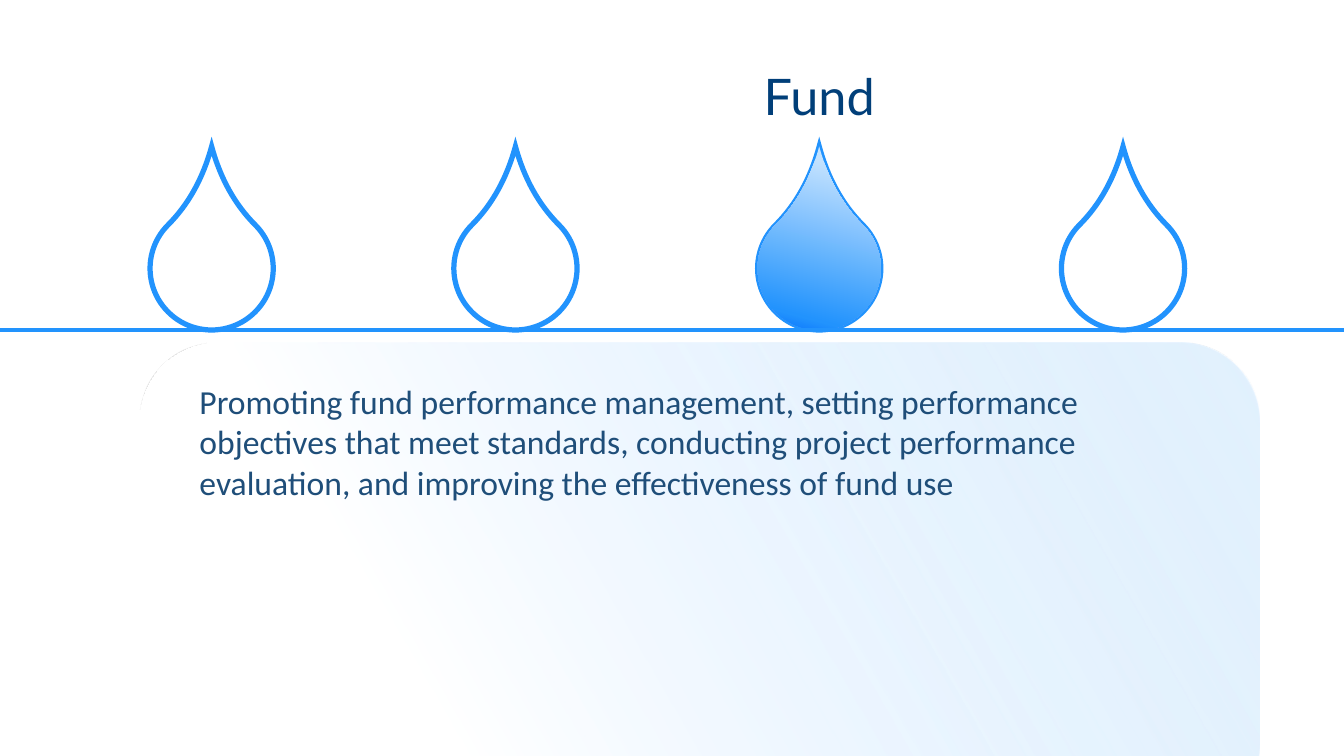
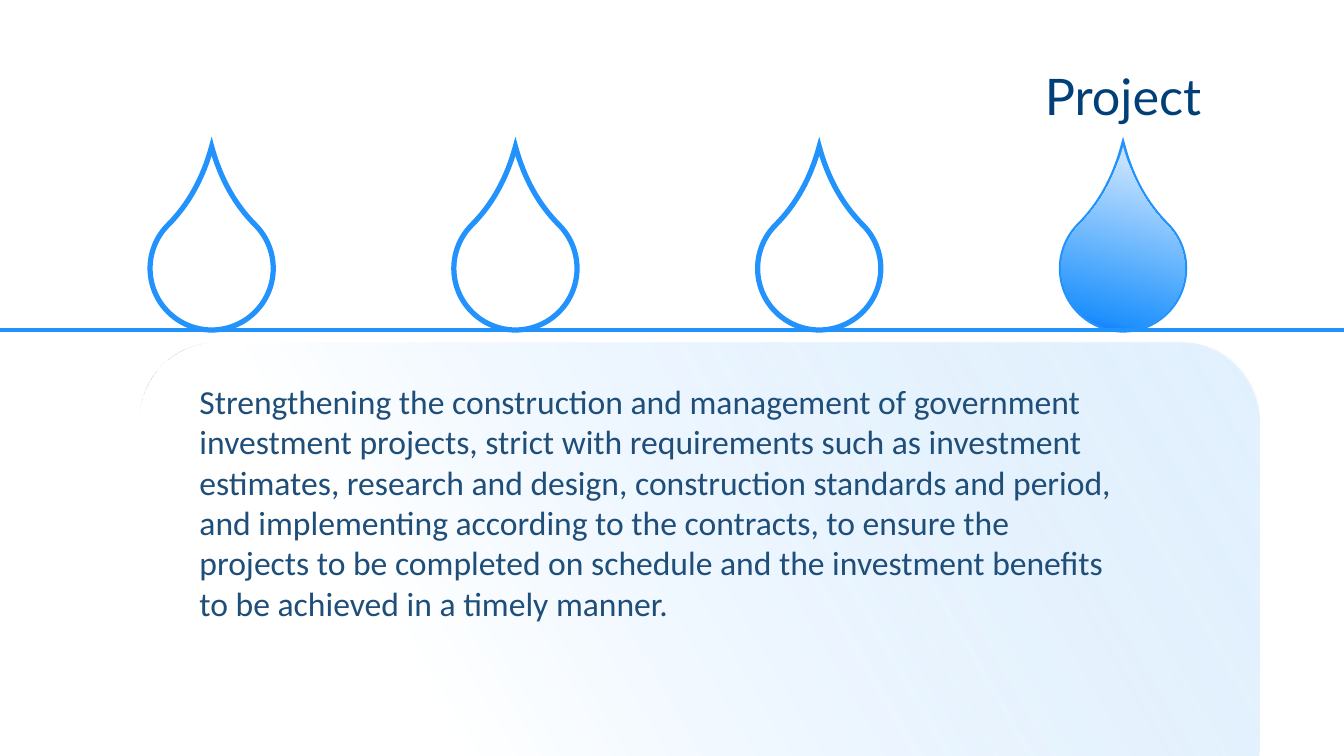
from lxml import etree
from pptx import Presentation
from pptx.dml.color import RGBColor
from pptx.enum import shapes, text
from pptx.oxml.ns import qn
from pptx.util import Pt

NAVY, INK, BLUE = "013F79", "1F4E79", "2293FD"
DROP_STOPS = [(0, "C5E3FE", 100), (74, BLUE, 100), (87, "016AFD", 100)]
PANEL_STOPS = [(0, "C5E3FE", 50), (74, "FFFFFF", 100), (87, "FFFFFF", 100)]
W, H = 960, 540
DROP_LEFT, DROP_TOP, DROP_SIZE, DROP_PITCH = 107.2, 147.7, 88, 217
TITLE_W = 160

# active drop, title, body
PAGES = [
    (2, "Fund",
     "Promoting fund performance management, setting performance objectives that "
     "meet standards, conducting project performance evaluation, and improving the "
     "effectiveness of fund use"),
    (3, "Project",
     "Strengthening the construction and management of government investment "
     "projects, strict with requirements such as investment estimates, research and "
     "design, construction standards and period, and implementing according to the "
     "contracts, to ensure the projects to be completed on schedule and the "
     "investment benefits to be achieved in a timely manner."),
]


def write(sp, words, font, size, color, align=text.PP_ALIGN.LEFT):
    tf = sp.text_frame
    tf.word_wrap = True
    tf.auto_size = text.MSO_AUTO_SIZE.NONE
    tf.vertical_anchor = text.MSO_ANCHOR.TOP
    p = tf.paragraphs[0]
    p.alignment = align
    r = p.add_run()
    r.text = words
    r.font.name, r.font.size = font, Pt(size)
    r.font.color.rgb = RGBColor.from_string(color)


def shade(sp, stops):
    sp.fill.gradient()
    sp.fill.gradient_angle = 210
    gs_list = sp._element.spPr.find(qn("a:gradFill")).find(qn("a:gsLst"))
    for gs in list(gs_list):
        gs_list.remove(gs)
    for pos, color, opacity in stops:
        gs = etree.SubElement(gs_list, qn("a:gs"), pos=str(pos * 1000))
        clr = etree.SubElement(gs, qn("a:srgbClr"), val=color)
        if opacity < 100:
            etree.SubElement(clr, qn("a:alpha"), val=str(opacity * 1000))


prs = Presentation()
prs.slide_width, prs.slide_height = Pt(W), Pt(H)

for active, title, body in PAGES:
    s = prs.slides.add_slide(prs.slide_layouts[5])

    # Row of drops: all outlined, the active one filled on top
    for i, filled in [(0, False), (1, False), (2, False), (3, False), (active, True)]:
        sp = s.shapes.add_shape(
            shapes.MSO_SHAPE.TEAR, Pt(DROP_LEFT + i * DROP_PITCH), Pt(DROP_TOP),
            Pt(DROP_SIZE), Pt(DROP_SIZE))
        sp.adjustments[0] = 1.4
        sp.rotation = 315
        sp.shadow.inherit = False
        if filled:
            shade(sp, DROP_STOPS)
            sp.line.fill.background()
        else:
            sp.fill.background()
            sp.line.color.rgb = RGBColor.from_string(BLUE)
            sp.line.width = Pt(3.75)
            etree.SubElement(sp.line._get_or_add_ln(), qn("a:miter"), lim="800000")

    # Ground line
    line = s.shapes.add_connector(
        shapes.MSO_CONNECTOR.STRAIGHT, 0, Pt(236), Pt(W), Pt(236))
    line.line.color.rgb = RGBColor.from_string(BLUE)
    line.line.width = Pt(3)
    etree.SubElement(line._element.spPr, qn("a:effectLst"))

    # Panel running off the bottom edge
    panel = s.shapes.add_shape(
        shapes.MSO_SHAPE.ROUNDED_RECTANGLE, Pt(100), Pt(244.8), Pt(800), Pt(343.4))
    panel.shadow.inherit = False
    panel.line.fill.background()
    shade(panel, PANEL_STOPS)

    # Body text
    box = s.shapes.add_textbox(Pt(135.4), Pt(268.6), Pt(668), Pt(182))
    write(box, body, "Calibri", 24, INK)

    # Title centred above the active drop
    head = s.shapes.title
    center = DROP_LEFT + active * DROP_PITCH + DROP_SIZE / 2
    head.left, head.top = Pt(center - TITLE_W / 2), Pt(43.2)
    head.width, head.height = Pt(TITLE_W), Pt(51)
    write(head, title, "Lato", 36, NAVY, text.PP_ALIGN.CENTER)

prs.save("out.pptx")
